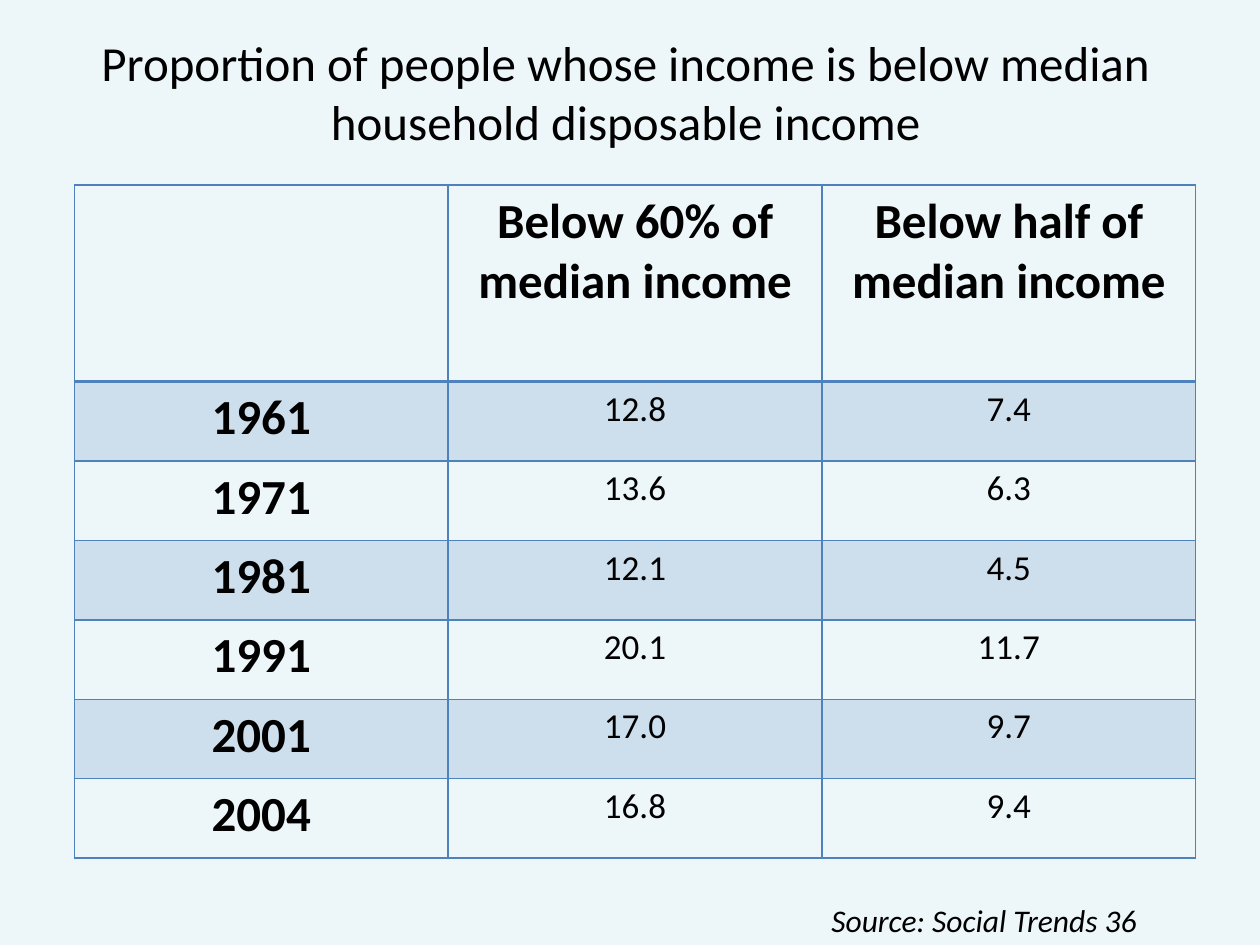
import pptx
import pptx.dml.color
import pptx.enum.text
import pptx.oxml
import pptx.oxml.ns
import pptx.util
from pptx.util import Inches

HUES = {"back": "EDF6F9", "band": "CDDFED", "rule": "4F81BD", "ink": "000000"}
FONT = "Calibri"
ALIGN = pptx.enum.text.PP_ALIGN
HEADS = ["", "Below 60% of median income", "Below half of median income"]
RATES = [
    ["1961", "12.8", "7.4"],
    ["1971", "13.6", "6.3"],
    ["1981", "12.1", "4.5"],
    ["1991", "20.1", "11.7"],
    ["2001", "17.0", "9.7"],
    ["2004", "16.8", "9.4"],
]


def color(name):
    return pptx.dml.color.RGBColor.from_string(HUES[name])


class Deck:
    """Holds the style and the current slide."""

    def __init__(self):
        self.prs = pptx.Presentation()
        self.prs.slide_width, self.prs.slide_height = Inches(10), Inches(7.5)
        self.slide = self.prs.slides.add_slide(self.prs.slide_layouts[5])
        fill = self.slide.background.fill
        fill.solid()
        fill.fore_color.rgb = color("back")

    def label(self, frame, text, size, align=ALIGN.CENTER, bold=False, slant=False):
        frame.text = text
        for par in frame.paragraphs:
            par.alignment = align
            font = par.runs[0].font if par.runs else par.font
            font.name, font.size = FONT, pptx.util.Pt(size)
            font.bold, font.italic = bold, slant
            font.color.rgb = color("ink")

    def title(self, text, left, top, width, height):
        box = self.slide.shapes.title
        box.left, box.top = Inches(left), Inches(top)
        box.width, box.height = Inches(width), Inches(height)
        frame = box.text_frame
        frame.word_wrap = True
        frame.auto_size = pptx.enum.text.MSO_AUTO_SIZE.NONE
        frame.vertical_anchor = pptx.enum.text.MSO_ANCHOR.TOP
        self.label(frame, text, 28)

    def note(self, text, left, top, width, height):
        box = self.slide.shapes.add_textbox(
            Inches(left), Inches(top), Inches(width), Inches(height))
        box.text_frame.word_wrap = False
        self.label(box.text_frame, text, 18, ALIGN.LEFT, slant=True)

    def border(self, cell, widths):
        """Draw the cell's edges; widths maps L, R, T and B to points."""
        props = cell._tc.get_or_add_tcPr()
        for side, width in widths.items():
            props.append(pptx.oxml.parse_xml(
                f'<a:ln{side} {pptx.oxml.ns.nsdecls("a")} w="{pptx.util.Pt(width)}">'
                f'<a:solidFill><a:srgbClr val="{HUES["rule"]}"/></a:solidFill>'
                f'</a:ln{side}>'))

    def table(self, rows, left, top, width, head, step):
        """Add a grid with a tall head row and equal rows below it."""
        count = len(rows[0])
        height = head + step * (len(rows) - 1)
        grid = self.slide.shapes.add_table(
            len(rows), count, Inches(left), Inches(top),
            Inches(width), Inches(height)).table
        grid.first_row = grid.horz_banding = False
        for col in grid.columns:
            col.width = Inches(width / count)
        for r, row in enumerate(rows):
            grid.rows[r].height = Inches(step if r else head)
            for c, text in enumerate(row):
                cell = grid.cell(r, c)
                main = r == 0 or c == 0
                self.label(cell.text_frame, text, 28 if main else 20, bold=main)
                self.border(cell, {"L": 1, "R": 1, "T": 2 if r == 1 else 1,
                                   "B": 2 if r == 0 else 1})
                if r % 2:
                    cell.fill.solid()
                    cell.fill.fore_color.rgb = color("band")
                else:
                    cell.fill.background()


def main():
    deck = Deck()
    deck.table([HEADS] + RATES, 0.59, 1.47, 8.9, 1.56, 0.63)
    deck.note("Source: Social Trends 36", 6.5, 7.1, 2.65, 0.4)
    deck.title("Proportion of people whose income is below median "
               "household disposable income", 0.28, 0.21, 9.37, 1.04)
    deck.prs.save("out.pptx")


if __name__ == "__main__":
    main()
